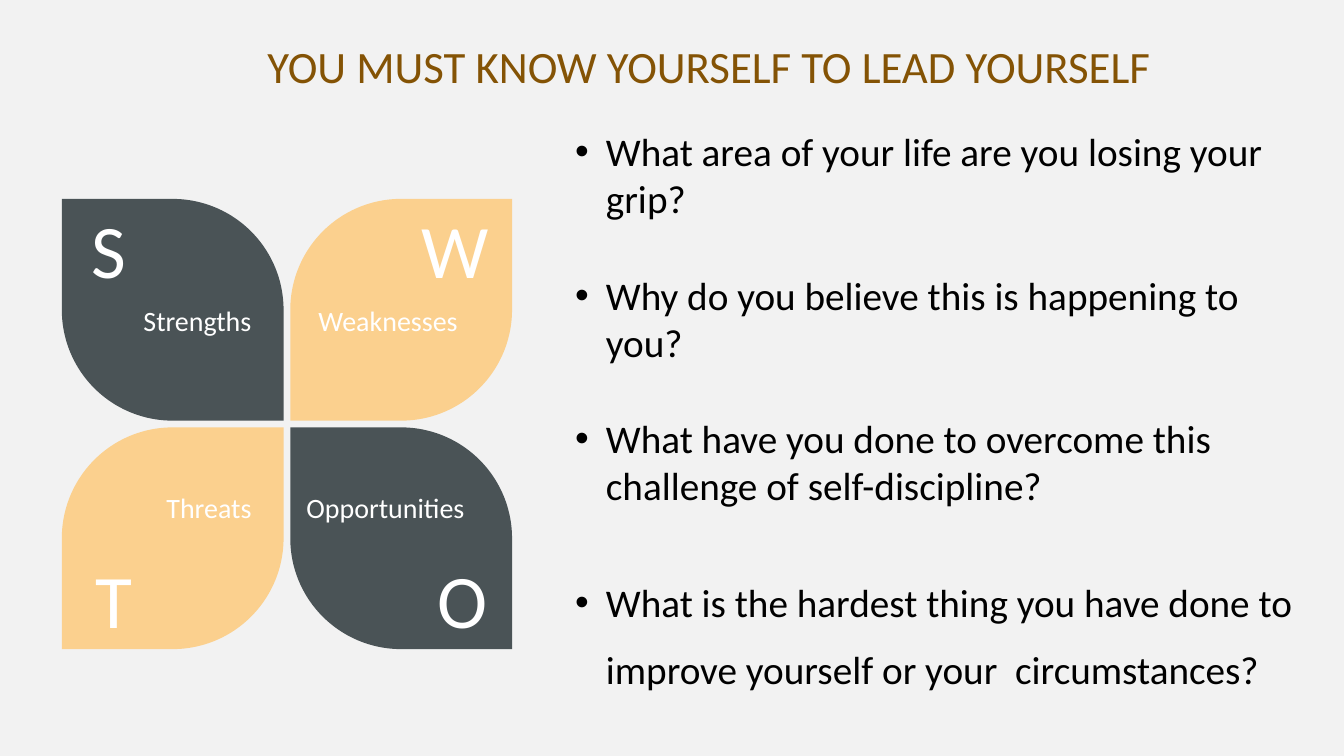
from lxml import etree
from pptx import Presentation
from pptx.dml.color import RGBColor
from pptx.enum.shapes import MSO_SHAPE
from pptx.enum.text import MSO_ANCHOR, MSO_AUTO_SIZE, PP_ALIGN as ALIGN
from pptx.oxml.ns import qn
from pptx.util import Inches, Pt

TITLE = "YOU MUST KNOW YOURSELF TO LEAD YOURSELF"
QUESTIONS = [
    "What area of your life are you losing your grip?",
    "Why do you believe this is happening to you?",
    "What have you done to overcome this challenge of self-discipline?",
    "What is the hardest thing you have done to improve yourself or your  circumstances?",
]
SLATE, SAND, WHITE = "4A5356", "FBD08E", "FFFFFF"
# column, row, fill, letter, letter left and width, label, label left and width
PETALS = [
    (0, 0, SLATE, "S", (0.48, 0.66), "Strengths", (0.73, 1.24)),
    (1, 0, SAND, "W", (2.98, 0.81), "Weaknesses", (2.31, 1.34)),
    (0, 1, SAND, "T", (0.48, 0.73), "Threats", (0.73, 1.24)),
    (1, 1, SLATE, "O", (3.08, 0.73), "Opportunities", (2.22, 1.49)),
]
GRID_LEFT, GRID_TOP, PETAL, PITCH = 0.46, 1.48, 1.65, 1.7
LETTER_TOPS, LABEL_TOPS = (1.51, 4.11), (2.21, 3.6)


def rgb(color):
    return RGBColor.from_string(color)


def write(para, text, size, color, align=ALIGN.LEFT):
    para.text = text
    para.alignment = align
    for run in para.runs:
        run.font.name, run.font.size, run.font.color.rgb = "Calibri", Pt(size), rgb(color)


def add_box(slide, left, top, width, height, insets=(0.1, 0.05, 0.1, 0.05)):
    box = slide.shapes.add_textbox(*map(Inches, (left, top, width, height)))
    frame = box.text_frame
    frame.word_wrap = True
    (frame.margin_left, frame.margin_top,
     frame.margin_right, frame.margin_bottom) = map(Inches, insets)
    return frame


def add_bullet(para):
    properties = para._p.get_or_add_pPr()
    properties.set("marL", str(Inches(0.24)))
    properties.set("indent", str(-Inches(0.23)))
    etree.SubElement(properties, qn("a:buFont")).set("typeface", "Arial")
    etree.SubElement(properties, qn("a:buChar")).set("char", "•")


def add_title(slide):
    title = slide.shapes.title
    title.left, title.top, title.width, title.height = map(Inches, (1.89, 0.24, 6.88, 0.5))
    frame = title.text_frame
    frame.word_wrap = False
    frame.auto_size = MSO_AUTO_SIZE.NONE
    frame.vertical_anchor = MSO_ANCHOR.TOP
    write(frame.paragraphs[0], TITLE, 24, "845305")


def add_questions(slide):
    frame = add_box(slide, 4.17, 0.9, 5.63, 4.35)
    for index, question in enumerate(QUESTIONS):
        para = frame.paragraphs[0] if index == 0 else frame.add_paragraph()
        add_bullet(para)
        write(para, question, 21, "000000")
        if index:
            para.space_before = Pt(26.5)
    para.line_spacing = 1.43


def add_petal(slide, column, row, fill, letter, letter_span, label, label_span):
    left, top = GRID_LEFT + column * PITCH, GRID_TOP + row * PITCH
    petal = slide.shapes.add_shape(MSO_SHAPE.ROUND_2_DIAG_RECTANGLE,
                                   *map(Inches, (left, top, PETAL, PETAL)))
    # The corners on the diagonal through the centre of the flower stay square.
    on_main_diagonal = column == row
    petal.adjustments[0] = 0 if on_main_diagonal else 0.5
    petal.adjustments[1] = 0.5 if on_main_diagonal else 0
    petal.shadow.inherit = False
    petal.fill.solid()
    petal.fill.fore_color.rgb = rgb(fill)
    petal.line.fill.background()

    x, width = letter_span
    frame = add_box(slide, x, LETTER_TOPS[row], width, 0.68, (0, 0, 0, 0))
    frame.vertical_anchor = MSO_ANCHOR.MIDDLE
    write(frame.paragraphs[0], letter, 40.5, WHITE, ALIGN.CENTER)

    x, width = label_span
    frame = add_box(slide, x, LABEL_TOPS[row], width, 0.35, (0.06 * column, 0.05, 0.1, 0.05))
    write(frame.paragraphs[0], label, 15, WHITE, ALIGN.LEFT if column else ALIGN.RIGHT)


def main():
    deck = Presentation()
    deck.slide_width = Inches(10)
    deck.slide_height = deck.slide_width * 9 // 16
    slide = deck.slides.add_slide(deck.slide_layouts[5])
    slide.background.fill.solid()
    slide.background.fill.fore_color.rgb = rgb("F2F2F2")
    add_title(slide)
    add_questions(slide)
    for petal in PETALS:
        add_petal(slide, *petal)
    deck.save("out.pptx")


if __name__ == "__main__":
    main()
